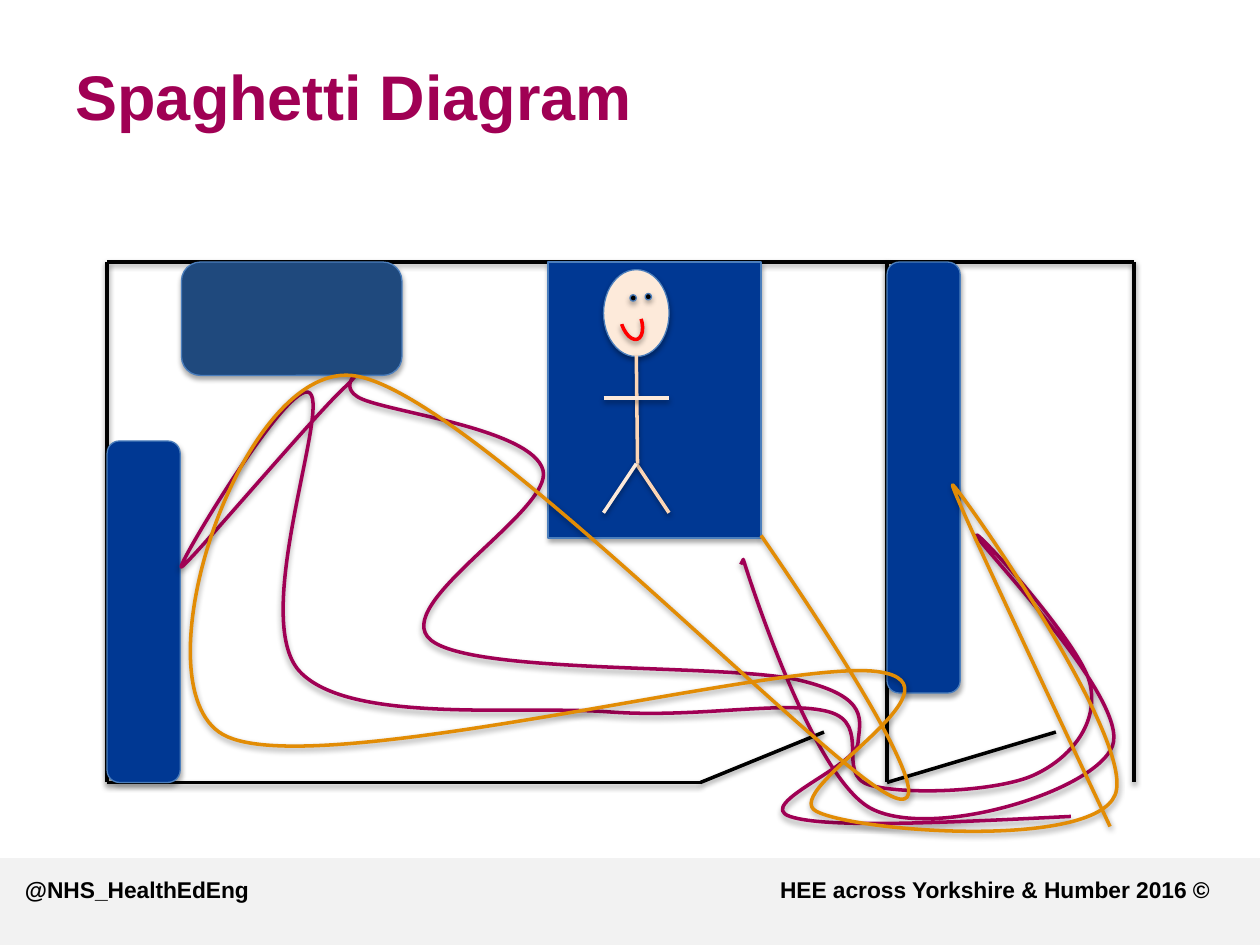
from lxml.etree import SubElement
from pptx import Presentation
from pptx.dml.color import RGBColor
from pptx.enum.shapes import MSO_CONNECTOR, MSO_SHAPE
from pptx.enum.text import MSO_ANCHOR, PP_ALIGN
from pptx.oxml.ns import qn
from pptx.util import Inches, Pt

WIDTH, HEIGHT = 10, 7.5
BAND_TOP = 6.81
LEFT, MIDDLE, RIGHT = 0.85, 7.04, 9
TOP, BOTTOM = 2.08, 6.21
BENCH_WIDTH = 0.58
BLACK, GREY, BLUE, NAVY, OUTLINE = "000000", "F2F2F2", "003893", "1F497D", "4B7EBC"
PURPLE, ORANGE, RED = "A00054", "E28C05", "FF0000"
SKIN, PEACH = "FDEADA", "FCD5B5"

# The places each walker passes, in order; the curves follow from these.
PURPLE_STOPS = [
    (8.5, 6.48), (6.27, 6.48), (6.81, 5.9), (6.35, 5.4),     # in by the left door
    (3.42, 5.08), (4.31, 3.73), (2.88, 3.17), (2.73, 3.08),  # to the top cabinet
    (1.44, 4.5), (2.46, 3.12), (2.38, 5.33),                 # to the left bench
    (4.83, 5.65), (6.58, 5.65), (6.9, 6.23),                 # back to the door
    (8.21, 6.15), (8.65, 5.42), (7.75, 4.25), (8.83, 5.92),  # to the right bench
    (6.92, 6.42), (5.9, 4.44),                               # to the bed
]
ORANGE_STOPS = [
    (8.81, 6.56), (7.56, 3.85), (8.85, 6.31),                # to the right bench
    (6.48, 6.44), (6.96, 5.33),                              # in by the left door
    (1.77, 5.83), (2.79, 2.98),                              # to the top cabinet
    (7.1, 6.33), (6.04, 4.25),                               # to the bed
]


def color(value):
    return RGBColor.from_string(value)


def inches(lengths):
    return [Inches(length) for length in lengths]


def set_line(shape, value, width=2.0):
    shape.line.color.rgb = color(value)
    shape.line.width = Pt(width)


def add_shadow(shape, distance=1.6, opacity=38):
    """Append a soft downward shadow; call it after fill and line are set."""
    effects = SubElement(shape._element.spPr, qn("a:effectLst"))
    shadow = SubElement(effects, qn("a:outerShdw"), blurRad=str(Pt(3.1)),
                        dist=str(Pt(distance)), dir="5400000", rotWithShape="0")
    black = SubElement(shadow, qn("a:srgbClr"), val=BLACK)
    SubElement(black, qn("a:alpha"), val=str(opacity * 1000))


def add_line(shapes, start, end, value=BLACK):
    line = shapes.add_connector(MSO_CONNECTOR.STRAIGHT, *inches(start + end))
    set_line(line, value)
    add_shadow(line)


def add_block(shapes, kind, box, fill):
    block = shapes.add_shape(kind, *inches(box))
    block.fill.solid()
    block.fill.fore_color.rgb = color(fill)
    set_line(block, OUTLINE, 0.75)
    add_shadow(block, distance=1.8, opacity=35)


def shift(point, step, share):
    """Move a point by a share of a step."""
    return tuple(p + s * share for p, s in zip(point, step))


def between(start, end):
    """Return the step that leads from start to end."""
    return tuple(e - s for s, e in zip(start, end))


def smooth_curve(stops):
    """Return two control points and an end point for each leg of a route.

    At each inner stop the curve runs parallel to the step from the stop
    before to the stop after, with handles a sixth of that step long.
    """
    steps = [between(before, after) for before, after in zip(stops, stops[2:])]
    arrivals = [shift(stop, step, -1 / 6) for stop, step in zip(stops[1:], steps)]
    departures = [shift(stop, step, 1 / 6) for stop, step in zip(stops[1:], steps)]
    first_departure = shift(stops[0], between(stops[0], arrivals[0]), 1 / 2)
    return list(zip([first_departure] + departures,
                    arrivals + [stops[-1]],
                    stops[1:]))


def add_route(shapes, stops, value, tail=()):
    """Draw a smooth route, ending with straight lines to the tail points."""
    legs = smooth_curve(stops)
    points = [point for leg in legs for point in leg] + list(tail)
    builder = shapes.build_freeform(*inches(stops[0]))
    builder.add_line_segments([inches(point) for point in points], close=False)
    route = builder.convert_to_shape()
    segments = list(route._element.iter(qn("a:lnTo")))
    for index in range(0, 3 * len(legs), 3):
        curve, *others = segments[index:index + 3]
        curve.tag = qn("a:cubicBezTo")
        for other in others:
            curve.append(other[0])
            other.getparent().remove(other)
    route.fill.background()
    set_line(route, value)
    add_shadow(route)


def write_text(shape, text, size, value, anchor):
    frame = shape.text_frame
    frame.word_wrap = True
    frame.vertical_anchor = anchor
    paragraph = frame.paragraphs[0]
    paragraph.alignment = PP_ALIGN.LEFT
    run = paragraph.add_run()
    run.text = text
    run.font.name = "Arial"
    run.font.size = Pt(size)
    run.font.bold = True
    run.font.color.rgb = color(value)
    return paragraph


def add_title(slide):
    title, subtitle = slide.placeholders
    subtitle._element.getparent().remove(subtitle._element)
    title.left, title.top, title.width, title.height = inches((0.5, 0.39, 8.5, 0.74))
    write_text(title, "Spaghetti Diagram", size=36, value=PURPLE,
               anchor=MSO_ANCHOR.MIDDLE)


def add_footer_band(shapes):
    band = shapes.add_shape(MSO_SHAPE.RECTANGLE,
                            *inches((0, BAND_TOP, WIDTH, HEIGHT - BAND_TOP)))
    band.shadow.inherit = False
    band.fill.solid()
    band.fill.fore_color.rgb = color(GREY)
    band.line.fill.background()


def add_footer_text(shapes):
    box = shapes.add_textbox(*inches((0.1, 6.9, 9.63, 0.4)))
    paragraph = write_text(
        box, "@NHS_HealthEdEng\tHEE across Yorkshire & Humber 2016 ©",
        size=13, value=BLACK, anchor=MSO_ANCHOR.TOP)
    tabs = SubElement(paragraph._p.get_or_add_pPr(), qn("a:tabLst"))
    SubElement(tabs, qn("a:tab"), pos=str(Inches(9.4)), algn="r")


def add_walls(shapes):
    left_hinge, right_hinge = (5.56, BOTTOM), (MIDDLE, BOTTOM)
    for x in (LEFT, MIDDLE, RIGHT):
        add_line(shapes, (x, TOP), (x, BOTTOM))
    for start, end in ((LEFT, MIDDLE), (MIDDLE, RIGHT)):
        add_line(shapes, (start, TOP), (end, TOP))
    add_line(shapes, left_hinge, (LEFT, BOTTOM))
    for hinge, door_end in ((left_hinge, 6.54), (right_hinge, 8.38)):
        add_line(shapes, hinge, (door_end, 5.81))


def add_furniture(shapes):
    rounded = MSO_SHAPE.ROUNDED_RECTANGLE
    bed = (4.35, TOP, 1.69, 2.19)
    cabinet = (1.44, TOP, 1.75, 0.9)
    right_bench = (MIDDLE, TOP, BENCH_WIDTH, 3.42)
    left_bench = (LEFT, 3.5, BENCH_WIDTH, BOTTOM - 3.5)
    add_block(shapes, MSO_SHAPE.RECTANGLE, bed, BLUE)
    add_block(shapes, rounded, cabinet, NAVY)
    for bench in (right_bench, left_bench):
        add_block(shapes, rounded, bench, BLUE)


def add_person(shapes):
    person = shapes.add_group_shape().shapes
    left, center, right = 4.79, 5.05, 5.31
    neck, arm_height, foot_height = (center, 2.82), 3.16, 4.07
    hip = (center, 3.68)
    add_line(person, hip, (right, foot_height), PEACH)
    add_block(person, MSO_SHAPE.OVAL, (left, 2.14, right - left, 0.69), SKIN)
    add_line(person, neck, (5.06, 3.68), PEACH)
    add_line(person, (left, arm_height), (right, arm_height), SKIN)
    add_line(person, hip, (left, foot_height), SKIN)
    add_smile(person)
    for eye_left, eye_top in ((5, 2.34), (5.12, 2.33)):
        add_block(person, MSO_SHAPE.FLOWCHART_CONNECTOR,
                  (eye_left, eye_top, 0.05, 0.05), BLACK)


def add_smile(shapes):
    smile = shapes.add_shape(MSO_SHAPE.ARC, *inches((4.93, 2.4, 0.16, 0.3)))
    smile.adjustments[0], smile.adjustments[1] = 214.63, 105.24
    smile.rotation = 161.5
    smile._element.spPr.find(qn("a:xfrm")).set("flipV", "1")
    smile.fill.background()
    set_line(smile, RED)
    add_shadow(smile)


def main():
    presentation = Presentation()
    presentation.slide_width, presentation.slide_height = inches((WIDTH, HEIGHT))
    slide = presentation.slides.add_slide(presentation.slide_layouts[0])
    add_footer_band(slide.shapes)
    add_title(slide)
    add_walls(slide.shapes)
    add_furniture(slide.shapes)
    add_person(slide.shapes)
    add_route(slide.shapes, PURPLE_STOPS, PURPLE, tail=[(5.88, 4.48)])
    add_footer_text(slide.shapes)
    add_route(slide.shapes, ORANGE_STOPS, ORANGE)
    presentation.save("out.pptx")


if __name__ == "__main__":
    main()
